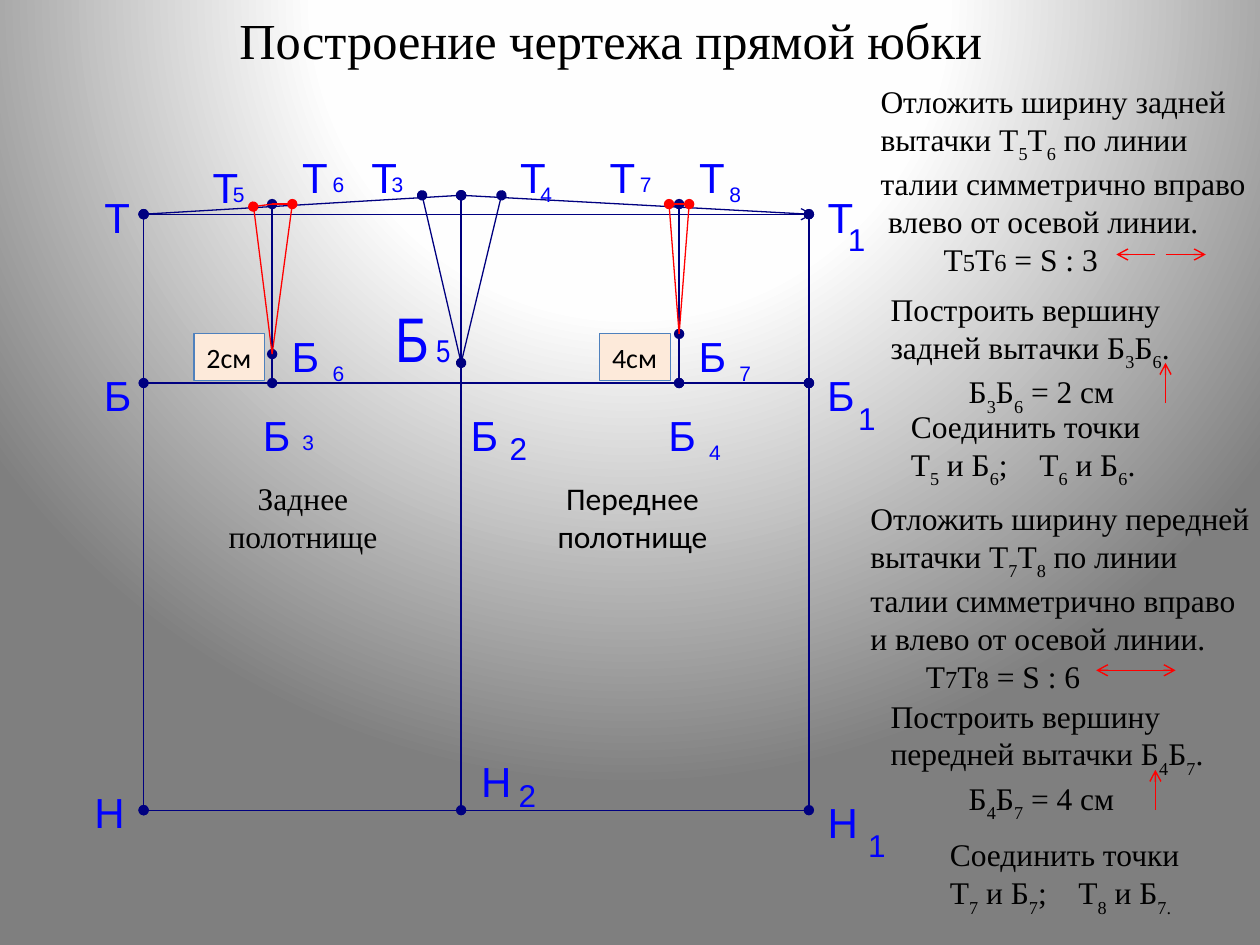
from lxml.etree import SubElement as Sub
from pptx import Presentation
from pptx.dml.color import RGBColor
from pptx.enum.shapes import MSO_CONNECTOR as Conn, MSO_SHAPE as Shape
from pptx.enum.text import MSO_ANCHOR as Anchor, MSO_AUTO_SIZE as Fit, PP_ALIGN as Align
from pptx.oxml.ns import qn
from pptx.util import Inches, Pt

NAVY, RED, BLUE, BLACK = "000080", "FF0000", "0000FF", "000000"
SERIF, SANS = "Times New Roman", "Calibri"


def rgb(code):
    return RGBColor.from_string(code)


def write(frame, rows, size=18, font=SERIF, color=BLACK, align=Align.LEFT,
          anchor=Anchor.TOP, wrap=True, grow=True, small=14, edge=None, tab=None):
    """Each row is text or (text, indent); |5| is a subscript, |^5| a smaller run."""
    frame.word_wrap = wrap
    frame.vertical_anchor = anchor
    frame.auto_size = Fit.SHAPE_TO_FIT_TEXT if grow else Fit.NONE
    for n, row in enumerate(rows):
        text, indent = row if isinstance(row, tuple) else (row, 0)
        para = frame.add_paragraph() if n else frame.paragraphs[0]
        para.alignment = align
        props = para._p.get_or_add_pPr()
        if indent:
            props.set("marL", str(Inches(indent)))
        if tab and "\t" in text:
            stops = Sub(props, qn("a:tabLst"))
            Sub(stops, qn("a:tab"), pos=str(Inches(tab)), algn="l")
        for k, part in enumerate(text.split("|")):
            if not part:
                continue
            run = para.add_run()
            run.text = part.lstrip("^")
            run.font.size = Pt(small if part[0] == "^" else size)
            run.font.name = font
            run.font.color.rgb = rgb(color)
            mark = run._r.get_or_add_rPr()
            if k % 2 and part[0] != "^":
                mark.set("baseline", "-30000")
            if edge:
                line = Sub(mark, qn("a:ln"), w=str(Pt(0.75)))
                fill = Sub(line, qn("a:solidFill"))
                Sub(fill, qn("a:srgbClr"), val=edge)
                mark.insert(0, line)


class Board:
    ends = {"o": "oval", ">": "arrow"}

    def __init__(self, slide):
        self.slide = slide

    def back(self, stops):
        self.slide.background.fill.gradient()
        grad = self.slide.element.find(".//" + qn("a:gradFill"))
        for child in list(grad):
            grad.remove(child)
        group = Sub(grad, qn("a:gsLst"))
        for pos, code in stops:
            stop = Sub(group, qn("a:gs"), pos=str(pos * 1000))
            Sub(stop, qn("a:srgbClr"), val=code)
        way = Sub(grad, qn("a:path"), path="circle")
        Sub(way, qn("a:fillToRect"), l="50000", t="-80000", r="50000", b="180000")

    def line(self, start, end, tips="--", color=NAVY, width=0.75):
        x1, y1, x2, y2 = (Inches(v) for v in (*start, *end))
        link = self.slide.shapes.add_connector(Conn.STRAIGHT, x1, y1, x2, y2)
        link.line.color.rgb = rgb(color)
        link.line.width = Pt(width)
        for tag, tip in zip(("a:headEnd", "a:tailEnd"), tips):
            if tip in self.ends:
                Sub(link.line._ln, qn(tag), type=self.ends[tip])
        Sub(link._element.spPr, qn("a:effectLst"))

    def text(self, box, *rows, **form):
        area = self.slide.shapes.add_textbox(*(Inches(v) for v in box))
        write(area.text_frame, rows, **form)

    def label(self, sign, x, y, size, wide, high, edge=NAVY):
        self.text((x, y, wide, high), sign, size=size, font="Arial", color=BLUE,
                  align=Align.CENTER, wrap=False, grow=False, edge=edge)

    def tag(self, x, y, text):
        rect = self.slide.shapes.add_shape(
            Shape.RECTANGLE, Inches(x), Inches(y), Inches(0.56), Inches(0.37))
        rect.shadow.inherit = False
        rect.fill.solid()
        rect.fill.fore_color.rgb = rgb("FDEADA")
        rect.line.color.rgb = rgb("4F81BD")
        rect.line.width = Pt(0.75)
        write(rect.text_frame, [text], size=16, font=SANS, wrap=False)


deck = Presentation()
deck.slide_width, deck.slide_height = Inches(10), Inches(7.5)
board = Board(deck.slides.add_slide(deck.slide_layouts[6]))
board.back([(0, "FFFFFF"), (40, "FEFEFE"), (100, "7F7F7F")])
board.text((0.35, 0, 9, 0.62), "Построение чертежа прямой юбки", size=28.8,
           align=Align.CENTER, anchor=Anchor.MIDDLE, grow=False)

# Points of the pattern: waist T, hip B, hem H
left, mid, right = 1.14, 3.66, 6.42
waist, peak, dart, hip, hem = 1.7, 1.55, 1.62, 3.04, 6.43
spot = {
    "T": (left, waist), "T1": (right, waist), "Tx": (6.45, waist), "T2": (mid, peak),
    "T3": (3.35, peak), "T4": (3.98, peak), "T5": (2.01, dart), "T6": (2.32, dart),
    "T7": (5.31, dart), "T8": (5.47, dart), "Ta": (2.16, dart), "Tb": (5.39, dart),
    "T5a": (2.01, 1.64),
    "B": (left, hip), "B1": (right, hip), "B3": (2.16, hip), "B4": (5.39, hip),
    "B5": (mid, 2.88), "B6": (2.16, 2.81), "B7": (5.39, 2.65),
    "H": (left, hem), "H1": (right, hem), "Hx": (6.45, hem), "H2": (mid, hem),
}

# Base grid, side seam and dart axes, then the red darts
base = ("T H oo, T Tx o>, B B1 oo, H Hx o-, B1 H1 oo, B1 T1 oo, H2 T2 oo, T T2 oo, "
        "T2 T1 oo, T3 B5 oo, T4 B5 o-, B3 Ta oo, B4 Tb oo, B3 B6 -o, B4 B7 oo")
darts = "Ta T5a -o, Ta T6 -o, T7 T8 oo, T6 B6 --, T5 B6 --, T7 B7 --, T8 B7 --"
for plan, color in ((base, NAVY), (darts, RED)):
    for item in plan.split(", "):
        a, b, tips = item.split()
        board.line(spot[a], spot[b], tips, color)

# Point letters
letters = {
    "Т": (0.2, "333399", [(0.83, 1.47), (2.95, 1.15), (4.13, 1.15), (6.57, 1.47),
                          (1.69, 1.23), (2.4, 1.15), (4.84, 1.15), (5.55, 1.15)]),
    "Б": (0.21, NAVY, [(0.83, 2.88), (2.09, 3.2), (3.74, 3.2), (5.31, 3.2),
                       (6.57, 2.88), (2.32, 2.57), (5.55, 2.57)]),
    "Н": (0.24, NAVY, [(0.75, 6.19), (3.82, 5.95), (6.57, 6.27)]),
}
for sign, (wide, edge, places) in letters.items():
    for x, y in places:
        board.label(sign, x, y, 24, wide, 0.38, edge)

# Point numbers
digits = {
    "1": (18, 0.14, 0.19, [(6.73, 1.7), (6.81, 3.12), (6.89, 6.51)]),
    "2": (18, 0.11, 0.23, [(4.06, 3.36), (4.13, 6.11)]),
    "3": (12, 0.09, 0.19, [(2.4, 3.36), (3.11, 1.31)]),
    "4": (12, 0.09, 0.19, [(5.63, 3.44), (4.29, 1.39)]),
    "5": (12, 0.09, 0.19, [(1.85, 1.39)]),
    "6": (12, 0.09, 0.19, [(2.64, 1.31), (2.64, 2.81)]),
    "7": (12, 0.09, 0.19, [(5.87, 2.81), (5.08, 1.31)]),
    "8": (12, 0.09, 0.19, [(5.79, 1.39)]),
}
for sign, (size, wide, high, places) in digits.items():
    for x, y in places:
        board.label(sign, x, y, size, wide, high)
board.text((3.03, 2.33, 0.65, 0.71), "Б|^ 5|", size=36, small=18, font="Arial Narrow",
           color=BLUE, align=Align.CENTER, wrap=False, edge=NAVY)

# Steps: dart width
board.text((6.89, 0.6, 3.54, 1.92), "Отложить ширину задней вытачки Т|5|Т|6| по линии",
           "талии симметрично вправо", ("влево от осевой линии.", 0.06),
           ("Т|^5|Т|^6| = S : 3", 0.5))
board.text((6.81, 3.91, 5, 1.62), "Отложить ширину передней", "вытачки Т|7|Т|8| по линии",
           "талии симметрично вправо", "и влево от осевой линии.",
           ("Т|^7|Т|^8| = S : 6", 0.44))

# Steps: dart tip, then joining the points
for y, side, a, b, size in ((2.25, "задней", 3, 6, 2), (5.48, "передней", 4, 7, 4)):
    board.text((6.97, y, 3.03, 1.01), "Построить вершину", f"{side} вытачки Б|{a}|Б|{b}|.",
               (f"Б|{a}|Б|{b}| = {size} см", 0.62))
joins = (((7.13, 3.2, 2.31, 0.71), "Т|5| и Б|6|;\tТ|6| и Б|6|.", Anchor.MIDDLE),
         ((7.44, 6.58, 2.87, 0.71), "Т|7| и Б|7|;\tТ|8| и Б|7.|", Anchor.TOP))
for box, pairs, anchor in joins:
    board.text(box, "Соединить точки", pairs, anchor=anchor, tab=1.02)

# Direction arrows beside the steps
for start, end in (((9.17, 2.02), (8.86, 2.02)), ((9.25, 2.02), (9.57, 2.02)),
                   ((9.17, 6.43), (9.17, 6.11)), ((9.02, 5.32), (8.7, 5.32)),
                   ((9.02, 5.32), (9.33, 5.32)), ((9.25, 3.2), (9.25, 2.88))):
    board.line(start, end, "->", RED, 0.79)

# Panel names and dart sizes
board.text((1.54, 3.75, 1.73, 0.71), "Заднее", "полотнище", align=Align.CENTER)
board.text((4.29, 3.75, 1.46, 0.71), "Переднее", "полотнище", font=SANS,
           align=Align.CENTER, wrap=False)
board.tag(1.54, 2.65, "2см")
board.tag(4.76, 2.65, "4см")

deck.save("out.pptx")
